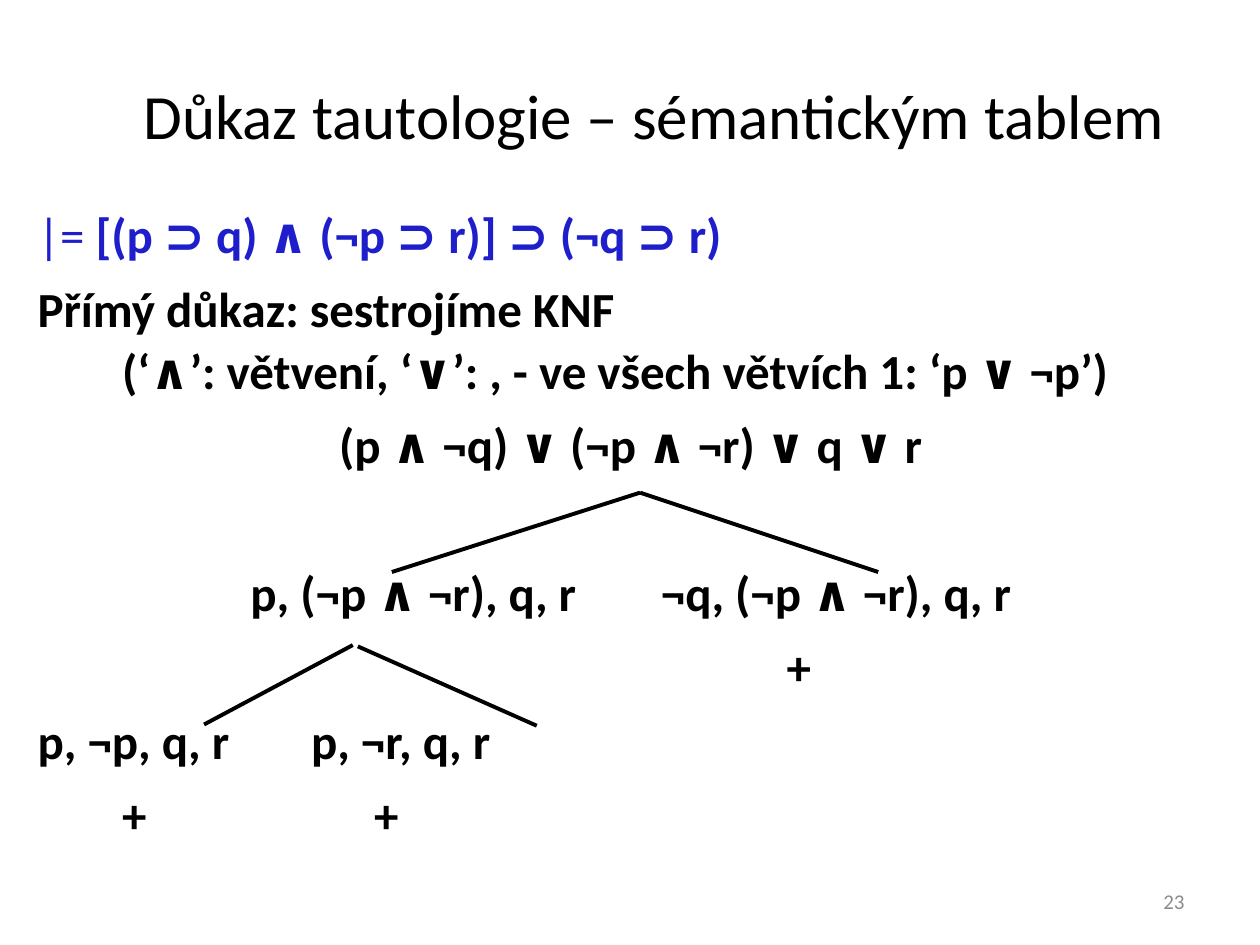
from pptx import Presentation
from pptx import util as u
from pptx.dml.color import RGBColor
from pptx.enum import shapes, text
from pptx.oxml.ns import qn

COLORS = {"ink": "000000", "formula": "1E1ECA", "number": "8C8C8C"}
LEFT, CENTER, RIGHT = text.PP_ALIGN.LEFT, text.PP_ALIGN.CENTER, text.PP_ALIGN.RIGHT
HANGING = u.Inches(0.67)
GAP, BRANCH_GAP = 7, 49.5

PROOF = [
    ("Přímý důkaz: sestrojíme KNF\n(‘∧’: větvení, ‘∨’: , - ve všech větvích 1: ‘p ∨ ¬p’)", LEFT, GAP),
    ("(p ∧ ¬q) ∨ (¬p ∧ ¬r) ∨ q ∨ r", CENTER, GAP),
    ("p, (¬p ∧ ¬r), q, r\t\t ¬q, (¬p ∧ ¬r), q, r", CENTER, BRANCH_GAP),
    ("\t\t\t\t\t+", CENTER, GAP),
    ("p, ¬p, q, r\t\tp, ¬r, q, r", LEFT, GAP),
    ("\t+\t\t\t\t+", LEFT, GAP),
]
BRANCHES = [
    (5.08, 3.91, 3.11, 4.54),
    (5.08, 3.91, 6.97, 4.54),
    (2.8, 5.12, 1.62, 5.75),
    (2.84, 5.13, 4.26, 5.76),
]


def style_run(run, size, color, bold=False):
    """Give a run its font, size, colour and weight."""
    run.font.name = "Calibri"
    run.font.size = u.Pt(size)
    run.font.bold = bold
    run.font.color.rgb = RGBColor.from_string(COLORS[color])


def add_frame(slide, left, top, width, height, anchor):
    """Add a wrapping text box and return its text frame."""
    frame = slide.shapes.add_textbox(*map(u.Inches, (left, top, width, height))).text_frame
    frame.word_wrap = True
    frame.vertical_anchor = anchor
    return frame


def add_label(slide, box, wording, size, color, align):
    """Add a single line of text centred vertically in its box."""
    label = add_frame(slide, *box, text.MSO_ANCHOR.MIDDLE).paragraphs[0]
    label.text = wording
    label.alignment = align
    style_run(label.runs[0], size, color)


def set_layout(step, align, gap):
    """Give a proof step its alignment, spacing and hanging indent."""
    step.alignment = align
    step.line_spacing = 1.05
    step.space_before = u.Pt(gap)
    properties = step._p.get_or_add_pPr()
    properties.set("marL", str(HANGING))
    properties.set("indent", str(-HANGING))


def add_proof(slide):
    """Write the formula and the steps of its proof."""
    frame = add_frame(slide, 0.2, 1.55, 9.61, 5.51, text.MSO_ANCHOR.TOP)
    formula = frame.paragraphs[0]
    set_layout(formula, LEFT, GAP)
    for part, bold in (("|= ", False), ("[(p ⊃ q) ∧ (¬p ⊃ r)] ⊃ (¬q ⊃ r)", True)):
        run = formula.add_run()
        run.text = part
        style_run(run, 28, "formula", bold)
    for wording, align, gap in PROOF:
        step = frame.add_paragraph()
        step.text = wording
        set_layout(step, align, gap)
        for run in step.runs:
            style_run(run, 28, "ink", True)


def add_branch(slide, ends):
    """Draw one branch of the tableau."""
    branch = slide.shapes.add_connector(shapes.MSO_CONNECTOR.STRAIGHT, *map(u.Inches, ends))
    branch.line.color.rgb = RGBColor.from_string(COLORS["ink"])
    branch.line.width = u.Pt(2.25)
    properties = branch._element.spPr
    properties.append(properties.makeelement(qn("a:effectLst"), {}))


def main():
    """Build the slide and save it."""
    deck = Presentation()
    deck.slide_width, deck.slide_height = u.Inches(10), u.Inches(7.5)
    slide = deck.slides.add_slide(deck.slide_layouts[6])
    add_label(slide, (7.17, 6.95, 2.33, 0.4), "23", 12, "number", RIGHT)
    add_label(slide, (0.5, 0.5, 9.38, 0.81), "Důkaz tautologie – sémantickým tablem", 36, "ink", CENTER)
    add_proof(slide)
    for ends in BRANCHES:
        add_branch(slide, ends)
    deck.save("out.pptx")


if __name__ == "__main__":
    main()
